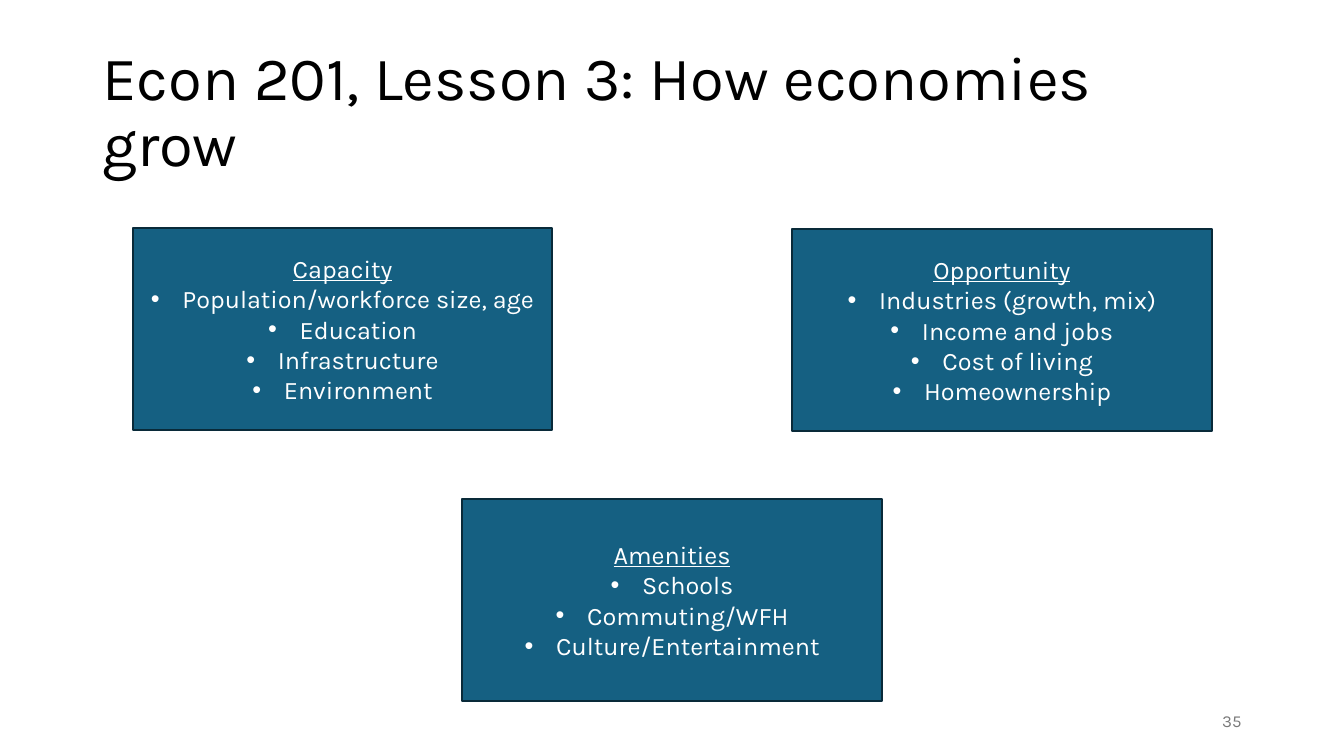
from lxml.etree import SubElement
from pptx import Presentation
from pptx.dml.color import RGBColor
from pptx.enum.shapes import MSO_SHAPE
from pptx.enum.text import MSO_ANCHOR, PP_ALIGN
from pptx.oxml.ns import qn
from pptx.util import Pt


def color(hex_string):
    return RGBColor.from_string(hex_string)


def write(paragraph, text, size=18, ink="FFFFFF", align=PP_ALIGN.CENTER,
          underline=False, bullet=False, spacing=1.0):
    paragraph.alignment = align
    paragraph.line_spacing = spacing
    run = paragraph.add_run()
    run.text = text
    run.font.name = "Karla"
    run.font.size = Pt(size)
    run.font.color.rgb = color(ink)
    run.font.underline = underline
    if bullet:
        properties = paragraph._p.get_or_add_pPr()
        properties.set("marL", str(Pt(22.5)))
        properties.set("indent", str(Pt(-22.5)))
        SubElement(properties, qn("a:buFont"), typeface="Arial")
        SubElement(properties, qn("a:buChar"), char="•")


deck = Presentation()
deck.slide_width = Pt(960)
deck.slide_height = Pt(540)
slide = deck.slides.add_slide(deck.slide_layouts[6])

captions = [
    ("Econ 201, Lesson 3: How economies grow", (66, 28.75, 828, 104.4),
     dict(size=44, ink="000000", align=PP_ALIGN.LEFT, spacing=0.9)),
    ("35", (678, 500.5, 216, 28.75),
     dict(size=12, ink="797979", align=PP_ALIGN.RIGHT)),
]
for text, place, style in captions:
    caption = slide.shapes.add_textbox(*map(Pt, place)).text_frame
    caption.word_wrap = True
    caption.vertical_anchor = MSO_ANCHOR.MIDDLE
    write(caption.paragraphs[0], text, **style)

growth_factors = [
    ("Capacity", 94.8, 162.9,
     ["Population/workforce size, age", "Education", "Infrastructure", "Environment"]),
    ("Opportunity", 565.8, 163.6,
     ["Industries (growth, mix)", "Income and jobs", "Cost of living", "Homeownership"]),
    ("Amenities", 330.2, 356.4,
     ["Schools", "Commuting/WFH", "Culture/Entertainment"]),
]
for heading, left, top, drivers in growth_factors:
    factor = slide.shapes.add_shape(
        MSO_SHAPE.RECTANGLE, Pt(left), Pt(top), Pt(299.8), Pt(144.4))
    factor.shadow.inherit = False
    factor.fill.solid()
    factor.fill.fore_color.rgb = color("156082")
    factor.line.color.rgb = color("092A39")
    factor.line.width = Pt(1.5)
    content = factor.text_frame
    content.word_wrap = True
    content.vertical_anchor = MSO_ANCHOR.MIDDLE
    write(content.paragraphs[0], heading, underline=True)
    for driver in drivers:
        write(content.add_paragraph(), driver, bullet=True)

deck.save("out.pptx")
